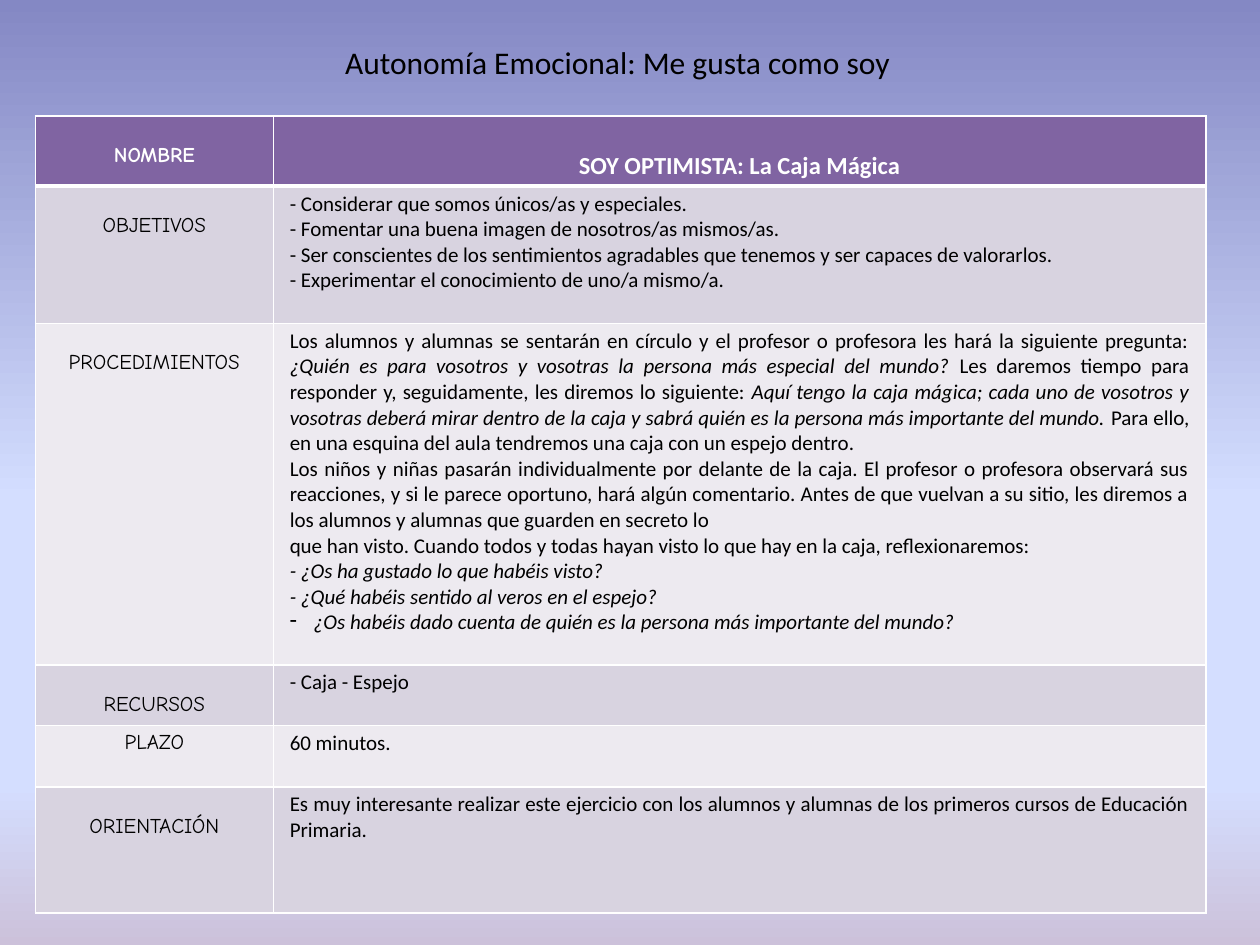
from dataclasses import dataclass

from lxml.etree import SubElement
from pptx import Presentation
from pptx.dml.color import RGBColor
from pptx.enum.text import PP_ALIGN
from pptx.oxml.ns import qn
from pptx.util import Inches, Pt


@dataclass(frozen=True)
class Theme:
    header: str = "8064A2"
    bands: tuple = ("D8D3E0", "EDEAF0")
    white: str = "FFFFFF"
    black: str = "000000"
    background: tuple = ((0, "8488C4"), (53, "D4DEFF"), (83, "D4DEFF"), (100, "CCC1DA"))
    body_font: str = "Calibri"
    label_font: str = "Comic Neue"
    title_size: int = 18
    header_size: int = 14
    body_size: int = 12


THEME = Theme()

HEADER = ("NOMBRE", "SOY OPTIMISTA: La Caja Mágica")
COLUMN_WIDTHS = (1.89, 7.4)
HEADER_HEIGHT = 0.55
LABEL_TOP = 0.22
CELL_TOP = 0.04

# A paragraph is a list of pieces that alternate between upright and italic.
# Each row: label, height, space above the label, paragraphs.
ROWS = [
    ("OBJETIVOS", 1.09, LABEL_TOP, [
        ["- Considerar que somos únicos/as y especiales."],
        ["- Fomentar una buena imagen de nosotros/as mismos/as."],
        ["- Ser conscientes de los sentimientos agradables que tenemos y ser capaces de valorarlos."],
        ["- Experimentar el conocimiento de uno/a mismo/a."],
    ]),
    ("PROCEDIMIENTOS", 2.71, LABEL_TOP, [
        ["Los alumnos y alumnas se sentarán en círculo y el profesor o profesora les hará la "
         "siguiente pregunta: ",
         "¿Quién es para vosotros y vosotras la persona más especial del mundo? ",
         "Les daremos tiempo para responder y, seguidamente, les diremos lo siguiente: ",
         "Aquí tengo la caja mágica; cada uno de vosotros y vosotras deberá mirar dentro de la "
         "caja y sabrá quién es la persona más importante del mundo. ",
         "Para ello, en una esquina del aula tendremos una caja con un espejo dentro."],
        ["Los niños y niñas pasarán individualmente por delante de la caja. El profesor o "
         "profesora observará sus reacciones, y si le parece oportuno, hará algún comentario. "
         "Antes de que vuelvan a su sitio, les diremos a los alumnos y alumnas que guarden en "
         "secreto lo"],
        ["que han visto. Cuando todos y todas hayan visto lo que hay en la caja, reflexionaremos:"],
        ["", "- ¿Os ha gustado lo que habéis visto?"],
        ["", "- ¿Qué habéis sentido al veros en el espejo?"],
        ["", "¿Os habéis dado cuenta de quién es la persona más importante del mundo?"],
    ]),
    ("RECURSOS", 0.48, LABEL_TOP, [["- Caja - Espejo"]]),
    ("PLAZO", 0.49, CELL_TOP, [["60 minutos."]]),
    ("ORIENTACIÓN", 1.0, LABEL_TOP, [
        ["Es muy interesante realizar este ejercicio con los alumnos y alumnas de los primeros "
         "cursos de Educación Primaria."],
    ]),
]


def write_paragraph(paragraph, pieces, font=THEME.body_font, size=THEME.body_size,
                    color=THEME.black, bold=False, align=PP_ALIGN.LEFT):
    """Write pieces as runs; every second piece is italic."""
    paragraph.alignment = align
    for index, text in enumerate(pieces):
        if not text:
            continue
        run = paragraph.add_run()
        run.text = text
        run.font.name = font
        run.font.size = Pt(size)
        run.font.bold = bold
        run.font.italic = index % 2 == 1
        run.font.color.rgb = RGBColor.from_string(color)


def add_dash_bullet(paragraph, indent):
    properties = paragraph._p.get_or_add_pPr()
    properties.set("marL", str(indent))
    properties.set("indent", str(-indent))
    SubElement(properties, qn("a:buChar"), char="-")


def style_cell(cell, fill, space_above=CELL_TOP, top_line=1, bottom_line=1):
    cell.margin_left = cell.margin_right = Inches(0.13)
    cell.margin_top, cell.margin_bottom = Inches(space_above), Inches(0.04)
    properties = cell._tc.get_or_add_tcPr()
    for side, width in (("L", 1), ("R", 1), ("T", top_line), ("B", bottom_line)):
        line = SubElement(properties, qn(f"a:ln{side}"), w=str(Pt(width)))
        SubElement(SubElement(line, qn("a:solidFill")), qn("a:srgbClr"), val=THEME.white)
    cell.fill.solid()
    cell.fill.fore_color.rgb = RGBColor.from_string(fill)


def fill_header(label_cell, name_cell):
    formats = ((label_cell, LABEL_TOP, THEME.label_font, THEME.body_size),
               (name_cell, 0.28, THEME.body_font, THEME.header_size))
    for text, (cell, space_above, font, size) in zip(HEADER, formats):
        style_cell(cell, THEME.header, space_above, bottom_line=3)
        write_paragraph(cell.text_frame.paragraphs[0], [text], font=font, size=size,
                        color=THEME.white, bold=True, align=PP_ALIGN.CENTER)


def fill_row(label_cell, body_cell, label, space_above, paragraphs, fill, top_line):
    style_cell(label_cell, fill, space_above, top_line)
    write_paragraph(label_cell.text_frame.paragraphs[0], [label],
                    font=THEME.label_font, align=PP_ALIGN.CENTER)
    style_cell(body_cell, fill, top_line=top_line)
    frame = body_cell.text_frame
    for index, pieces in enumerate(paragraphs):
        paragraph = frame.add_paragraph() if index else frame.paragraphs[0]
        write_paragraph(paragraph, pieces, align=PP_ALIGN.JUSTIFY)
        if pieces[-1].startswith("¿"):
            add_dash_bullet(paragraph, Inches(0.19))


def add_activity_table(slide, left, top, width, height):
    table = slide.shapes.add_table(len(ROWS) + 1, 2, left, top, width, height).table
    table.first_row = table.horz_banding = False
    for column, column_width in zip(table.columns, COLUMN_WIDTHS):
        column.width = Inches(column_width)
    heights = [HEADER_HEIGHT] + [row[1] for row in ROWS]
    for row, row_height in zip(table.rows, heights):
        row.height = Inches(row_height)
    fill_header(*table.rows[0].cells)
    for index, (label, _, space_above, paragraphs) in enumerate(ROWS):
        fill_row(*table.rows[index + 1].cells, label, space_above, paragraphs,
                 fill=THEME.bands[index % 2], top_line=1 if index else 3)


def add_title(slide, left, top, width, height):
    frame = slide.shapes.add_textbox(left, top, width, height).text_frame
    frame.word_wrap = True
    write_paragraph(frame.paragraphs[0], ["Autonomía Emocional: Me gusta como soy"],
                    size=THEME.title_size)


def paint_background(slide):
    fill = slide.background.fill
    fill.gradient()
    fill.gradient_angle = 270
    stops = slide.background._cSld.find(".//" + qn("a:gsLst"))
    for stop in list(stops):
        stops.remove(stop)
    for position, color in THEME.background:
        stop = SubElement(stops, qn("a:gs"), pos=str(position * 1000))
        SubElement(stop, qn("a:srgbClr"), val=color)


def main():
    presentation = Presentation()
    presentation.slide_width, presentation.slide_height = Inches(10), Inches(7.5)
    slide = presentation.slides.add_slide(presentation.slide_layouts[6])
    paint_background(slide)
    table_height = HEADER_HEIGHT + sum(row[1] for row in ROWS)
    add_activity_table(slide, Inches(0.28), Inches(0.92),
                       Inches(sum(COLUMN_WIDTHS)), Inches(table_height))
    add_title(slide, Inches(2.64), Inches(0.29), Inches(4.88), Inches(0.4))
    presentation.save("out.pptx")


if __name__ == "__main__":
    main()
